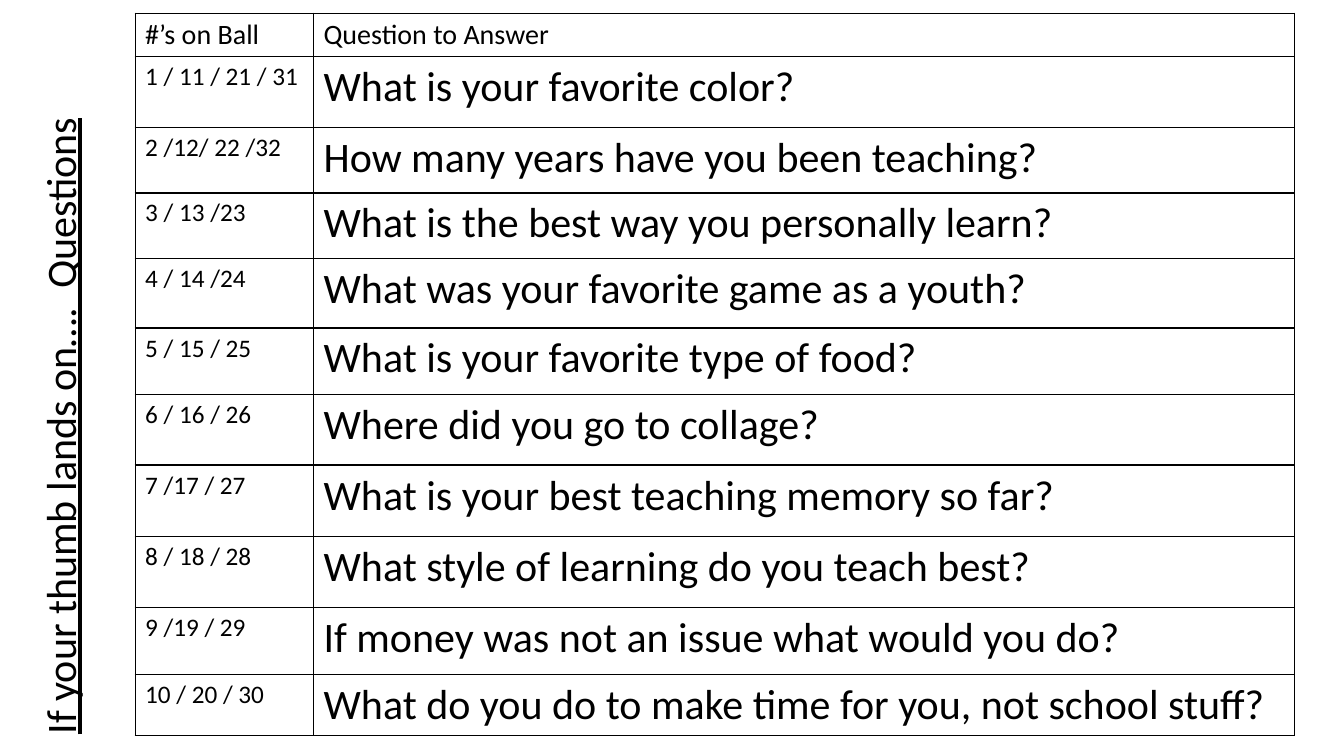
"""Build the thumb-ball question slide."""
import pptx
import pptx.dml.color
import pptx.enum.text
import pptx.oxml
import pptx.oxml.ns
import pptx.util

COLORS = {"ink": "000000", "paper": "FFFFFF"}
FONT = "Calibri"
TITLE = "If your thumb lands on….  Questions"
HEADINGS = ("#’s on Ball", "Question to Answer")
QUESTIONS = [
    ("1 / 11 / 21 / 31", "What is your favorite color?"),
    ("2 /12/ 22 /32", "How many years have you been teaching?"),
    ("3 / 13 /23", "What is the best way you personally learn?"),
    ("4 / 14 /24", "What was your favorite game as a youth?"),
    ("5 / 15 / 25", "What is your favorite type of food?"),
    ("6 / 16 / 26", "Where did you go to collage?"),
    ("7 /17 / 27", "What is your best teaching memory so far?"),
    ("8 / 18 / 28", "What style of learning do you teach best?"),
    ("9 /19 / 29", "If money was not an issue what would you do?"),
    ("10 / 20 / 30", "What do you do to make time for you, not school stuff?"),
]
COLUMN_WIDTHS = (1.77, 9.73)
ROW_HEIGHTS = (0.4, 0.7, 0.65, 0.65, 0.69, 0.66, 0.7, 0.71, 0.7, 0.67, 0.59)


def write_text(text_frame, text, size, underline=False, line_spacing=None):
    """Write one formatted paragraph."""
    paragraph = text_frame.paragraphs[0]
    paragraph.alignment = pptx.enum.text.PP_ALIGN.LEFT
    if line_spacing:
        paragraph.line_spacing = line_spacing
    run = paragraph.add_run()
    run.text = text
    run.font.name = FONT
    run.font.size = pptx.util.Pt(size)
    if underline:
        run.font.underline = True
    run.font.color.rgb = pptx.dml.color.RGBColor.from_string(COLORS["ink"])


def add_borders(cell, width):
    """Draw a solid line on all four sides of a cell."""
    properties = cell._tc.get_or_add_tcPr()
    for index, side in enumerate(("lnL", "lnR", "lnT", "lnB")):
        border = pptx.oxml.parse_xml(
            f'<a:{side} {pptx.oxml.ns.nsdecls("a")} w="{pptx.util.Pt(width)}">'
            f'<a:solidFill><a:srgbClr val="{COLORS["ink"]}"/></a:solidFill></a:{side}>'
        )
        properties.insert(index, border)


class SlideBuilder:
    """Hold the current slide and add elements in its style."""

    def __init__(self, presentation):
        """Add a blank slide with a plain background."""
        self.slide = presentation.slides.add_slide(presentation.slide_layouts[6])
        fill = self.slide.background.fill
        fill.solid()
        fill.fore_color.rgb = pptx.dml.color.RGBColor.from_string(COLORS["paper"])

    def add_title(self, text, left, top, width, height, rotation):
        """Add the rotated, underlined title."""
        shape = self.slide.shapes.add_textbox(
            *map(pptx.util.Inches, (left, top, width, height)))
        shape.rotation = rotation
        shape.text_frame.word_wrap = True
        shape.text_frame.vertical_anchor = pptx.enum.text.MSO_ANCHOR.MIDDLE
        write_text(shape.text_frame, text, size=30, underline=True, line_spacing=0.9)

    def add_question_table(self, rows, left, top):
        """Add the bordered table of ball numbers and questions."""
        table = self.slide.shapes.add_table(
            len(rows), len(COLUMN_WIDTHS),
            *map(pptx.util.Inches, (left, top, sum(COLUMN_WIDTHS), sum(ROW_HEIGHTS)))
        ).table
        table.first_row = table.horz_banding = False
        for column, width in zip(table.columns, COLUMN_WIDTHS):
            column.width = pptx.util.Inches(width)
        for row_index, (row, height) in enumerate(zip(table.rows, ROW_HEIGHTS)):
            row.height = pptx.util.Inches(height)
            sizes = (18, 30) if row_index else (20, 20)
            for cell, text, size in zip(row.cells, rows[row_index], sizes):
                cell.fill.background()
                add_borders(cell, width=1)
                write_text(cell.text_frame, text, size=size)


def main():
    """Build and save the presentation."""
    presentation = pptx.Presentation()
    presentation.slide_width = pptx.util.Inches(13.33)
    presentation.slide_height = pptx.util.Inches(7.5)
    builder = SlideBuilder(presentation)
    builder.add_title(TITLE, -4.62, 1.42, 10.48, 1.45, rotation=270)
    builder.add_question_table([HEADINGS, *QUESTIONS], 1.34, 0.13)
    presentation.save("out.pptx")


if __name__ == "__main__":
    main()
